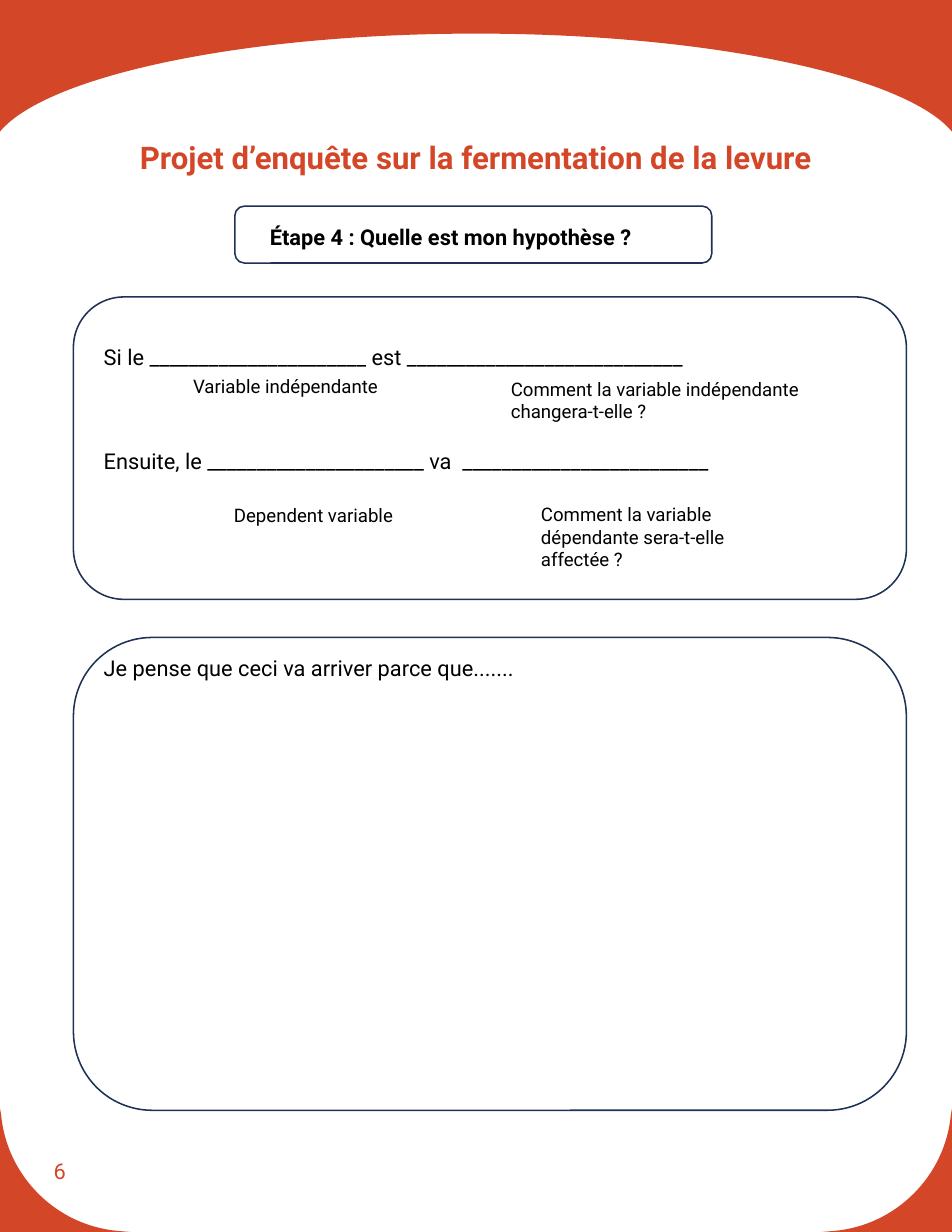
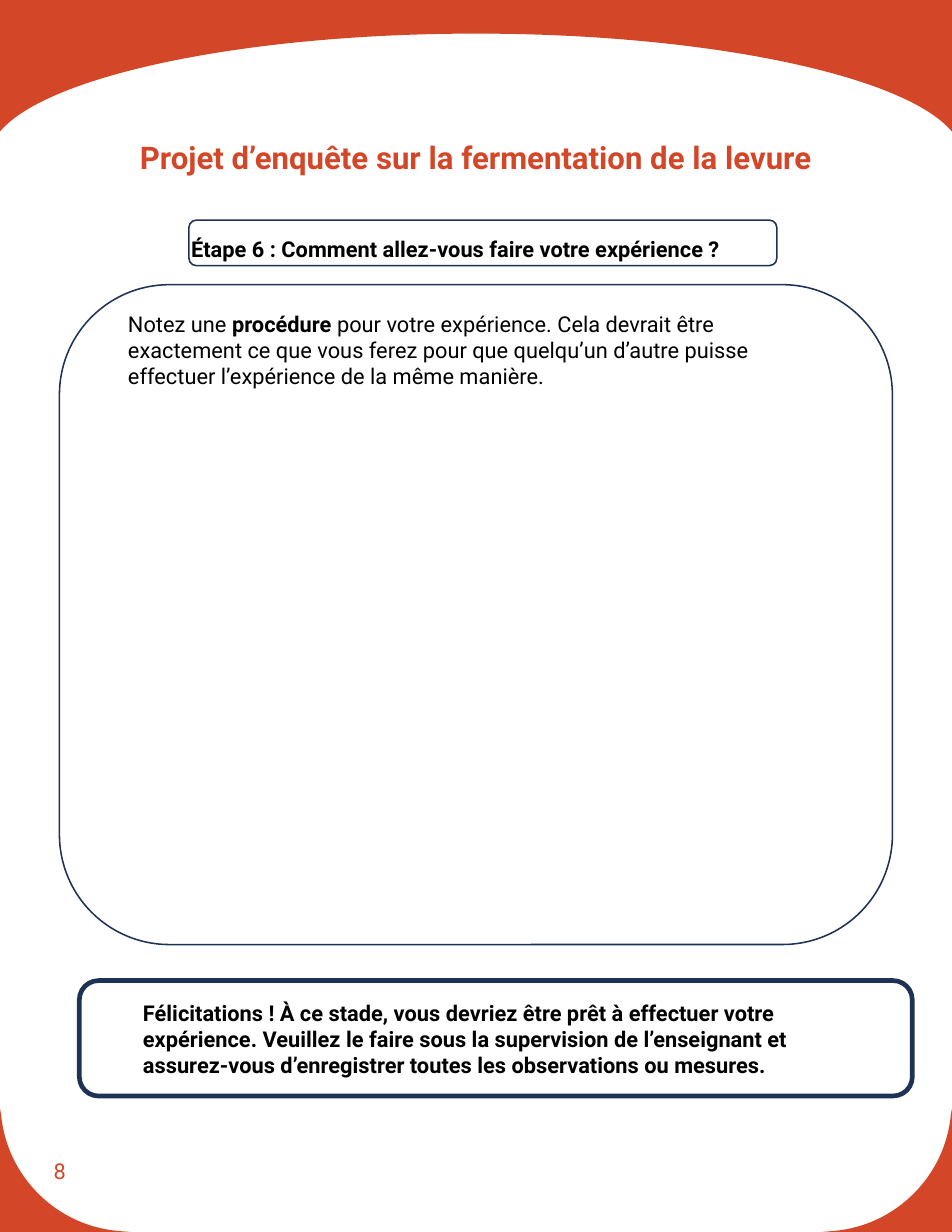
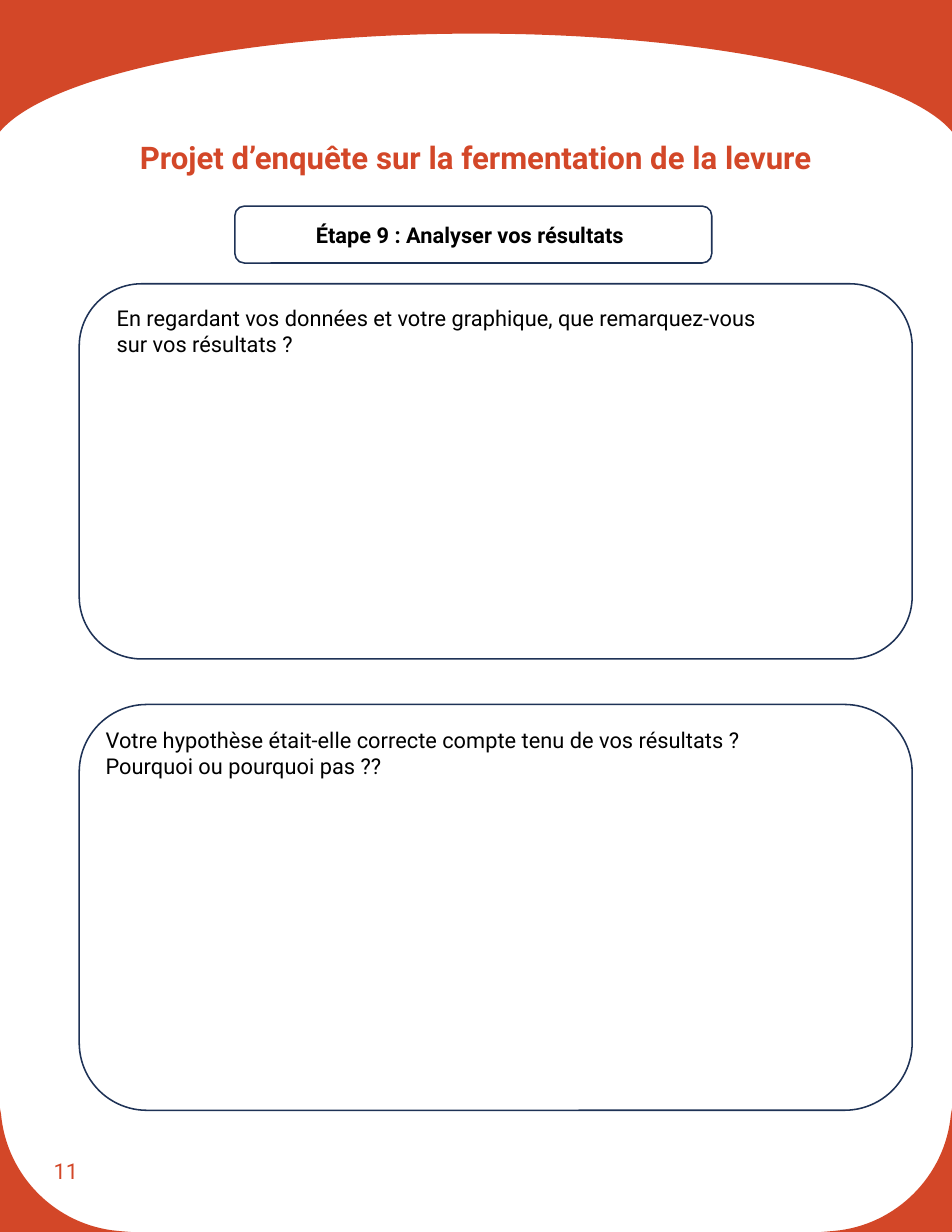
from lxml.etree import SubElement
from pptx import Presentation
from pptx.dml.color import RGBColor
from pptx.enum.shapes import MSO_SHAPE as Shape
from pptx.enum.text import MSO_ANCHOR as Anchor, PP_ALIGN as Align
from pptx.oxml.ns import qn
from pptx.util import Pt

PAGE_W, PAGE_H = 612, 792
ORANGE, NAVY, BLACK = "D34728", "1E3256", "000000"
FONT = "Roboto"
TITLE = "Projet d’enquête sur la fermentation de la levure"

PANEL_W = 535.5
STEP_FRAME = (151, 132.5, 306.6, 36.6)

# Frames: (left, top, width, height[, line width]).
# Texts: (left, top, width, height), paragraphs, options.
# A paragraph is a string, or a list of (text, bold) runs.
PAGES = [
    {
        "number": "6",
        "frames": [
            (47.2, 409.8, PANEL_W, 304),
            (47.2, 190.9, PANEL_W, 194.4),
            STEP_FRAME,
        ],
        "texts": [
            ((59.6, 417.3, 522.7, 24.5), ["Je pense que ceci va arriver parce que......."], {}),
            ((59.6, 217.4, 522.7, 92.2),
             ["Si le ______________________ est ____________________________",
              "Ensuite, le ______________________ va  _________________________"],
             {"gap": 50}),
            ((117, 237.6, 163.4, 21.6), ["Variable indépendante"], {"size": 12}),
            ((321.3, 239.4, 252, 36), ["Comment la variable indépendante changera-t-elle ?"],
             {"size": 12}),
            ((143.3, 320.4, 163.4, 21.6), ["Dependent variable"], {"size": 12}),
            ((340.7, 320, 163.4, 51.1),
             ["Comment la variable dépendante sera-t-elle affectée ?"], {"size": 12}),
            ((166.4, 140.4, 297.4, 24.5), ["Étape 4 : Quelle est mon hypothèse ?"], {"bold": True}),
        ],
    },
    {
        "number": "8",
        "frames": [
            (38.2, 183, PANEL_W, 424.2),
            (121.4, 141.5, 378, 29.3),
            (51, 630.4, PANEL_W, 74.2, 3),
        ],
        "texts": [
            ((75.2, 196.2, 468, 58.3),
             [[("Notez une ", False), ("procédure", True),
               (" pour votre expérience. Cela devrait être exactement ce que vous ferez pour que "
                "quelqu’un d’autre puisse effectuer l’expérience de la même manière.", False)]],
             {}),
            ((115.8, 148.3, 479.6, 19.4),
             ["Étape 6 : Comment allez-vous faire votre expérience ?"], {"bold": True}),
            ((84.8, 638.9, 468, 58.3),
             ["Félicitations ! À ce stade, vous devriez être prêt à effectuer votre expérience. "
              "Veuillez le faire sous la supervision de l’enseignant et assurez-vous "
              "d’enregistrer toutes les observations ou mesures."], {"bold": True}),
        ],
    },
    {
        "number": "11",
        "frames": [
            STEP_FRAME,
            (50.9, 182.4, PANEL_W, 241.2),
            (50.9, 452.9, PANEL_W, 260.9),
        ],
        "texts": [
            ((196, 139, 297.4, 24.5), ["Étape 9 : Analyser vos résultats"], {"bold": True}),
            ((67.9, 192.2, 475.9, 41),
             ["En regardant vos données et votre graphique, que remarquez-vous",
              "sur vos résultats ?"], {}),
            ((60.8, 463.7, 469.4, 41),
             ["Votre hypothèse était-elle correcte compte tenu de vos résultats ?",
              "Pourquoi ou pourquoi pas ??"], {}),
        ],
    },
]

# An outline is a start point, then segments: one point for a line, three for a curve.
ARCH = [
    [(0, 0)],
    [(PAGE_W, 0)],
    [(PAGE_W, 84.6)],
    [(582.5, 49), (456.5, 21.6), (306, 21.6)],
    [(155.5, 21.6), (29.5, 49), (0, 84.6)],
]
CORNER = [
    [(0, 712.6)],
    [(0.7, 716.4)],
    [(4.3, 756), (36, 787.7), (75.6, 791.3)],
    [(84, PAGE_H)],
    [(0, PAGE_H)],
]
MIRRORED_CORNER = [[(PAGE_W - x, y) for x, y in segment] for segment in CORNER]


def rgb(color):
    return RGBColor.from_string(color)


def add_border(slide, outline):
    start, *ends = [(Pt(x), Pt(y)) for x, y in (segment[-1] for segment in outline)]
    builder = slide.shapes.build_freeform(*start)
    builder.add_line_segments(ends, close=True)
    border = builder.convert_to_shape()
    border.shadow.inherit = False
    border.fill.solid()
    border.fill.fore_color.rgb = rgb(ORANGE)
    border.line.fill.background()
    lines = list(border.element.iter(qn("a:lnTo")))
    for line, segment in zip(lines, outline[1:]):
        if len(segment) == 3:
            bend(line, segment, border.left, border.top)
    return border


def bend(line, segment, left, top):
    """Turn a line of a path into a cubic curve."""
    line.tag = qn("a:cubicBezTo")
    for point in list(line):
        line.remove(point)
    for x, y in segment:
        SubElement(line, qn("a:pt"), x=str(Pt(x) - left), y=str(Pt(y) - top))


def add_frame(slide, left, top, width, height, line_width=1):
    frame = slide.shapes.add_shape(
        Shape.ROUNDED_RECTANGLE, Pt(left), Pt(top), Pt(width), Pt(height))
    frame.shadow.inherit = False
    frame.fill.background()
    frame.line.color.rgb = rgb(NAVY)
    frame.line.width = Pt(line_width)


def add_text(slide, place, paragraphs, size=14, color=BLACK, bold=False, gap=0,
             align=Align.LEFT, spacing=None, anchor=Anchor.TOP):
    frame = slide.shapes.add_textbox(*map(Pt, place)).text_frame
    frame.word_wrap = True
    frame.vertical_anchor = anchor
    for index, content in enumerate(paragraphs):
        paragraph = frame.add_paragraph() if index else frame.paragraphs[0]
        if index and gap:
            paragraph.space_before = Pt(gap)
        paragraph.alignment = align
        if spacing:
            paragraph.line_spacing = spacing
        font = paragraph.font
        font.name, font.size, font.bold = FONT, Pt(size), bold
        font.color.rgb = rgb(color)
        for words, is_bold in [(content, bold)] if isinstance(content, str) else content:
            run = paragraph.add_run()
            run.text = words
            if is_bold != bold:
                run.font.bold = is_bold


def add_page(deck, layout, page):
    slide = deck.slides.add_slide(layout)
    add_text(slide, (27.4, 731.5, 137.5, 42.5), [page["number"]],
             color=ORANGE, anchor=Anchor.MIDDLE)
    add_text(slide, (25.5, 78.5, 560.9, 61.9), [TITLE], size=20, color=ORANGE,
             bold=True, align=Align.CENTER, spacing=1.3)
    for frame in page["frames"]:
        add_frame(slide, *frame)
    for place, paragraphs, options in page["texts"]:
        add_text(slide, place, paragraphs, **options)
    return slide


def main():
    deck = Presentation()
    deck.slide_width, deck.slide_height = Pt(PAGE_W), Pt(PAGE_H)
    layout = deck.slide_layouts[6]
    slides = [add_page(deck, layout, page) for page in PAGES]
    # The borders belong to the layout, so that every slide shows them.
    for outline in (ARCH, CORNER, MIRRORED_CORNER):
        border = add_border(slides[0], outline)
        layout.shapes.element.append(border.element)
    deck.save("out.pptx")


if __name__ == "__main__":
    main()
